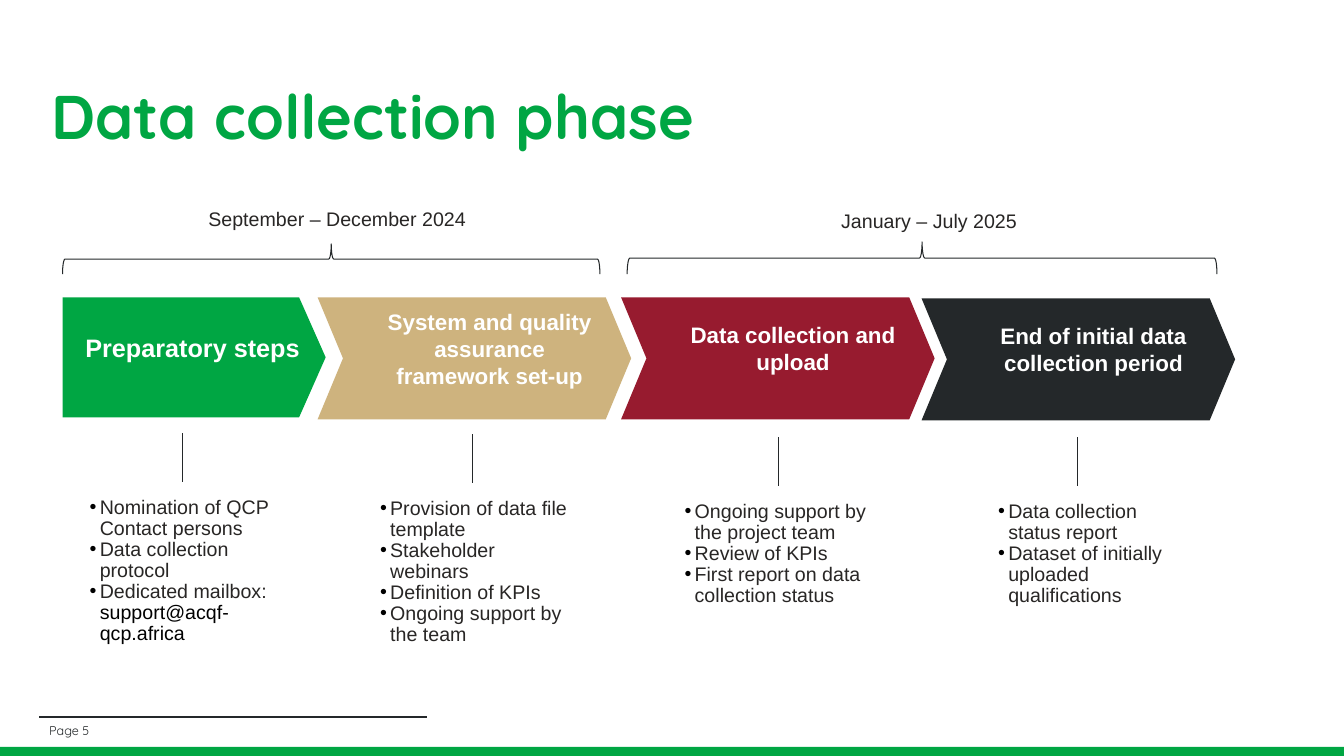
from lxml import etree
from pptx import Presentation
from pptx import util as u
from pptx.dml.color import RGBColor
from pptx.enum import shapes, text
from pptx.oxml.ns import qn

GREEN, DARK, RED, SAND = "00A643", "24282A", "971B2F", "CEB37E"
BODY, BLACK, WHITE = "282625", "000000", "FFFFFF"


def rgb(value):
    return RGBColor.from_string(value)


class PhaseSlide:
    font = "Arial"
    heading_font = "Quicksand"
    label_insets = (0.53, 0.05, 0.53, 0.13)

    def __init__(self, slide):
        self.items = slide.shapes

    def fill_text(self, frame, paragraphs, size, color, insets, font=None, bold=False,
                  align=text.PP_ALIGN.LEFT, anchor=text.MSO_ANCHOR.TOP, spacing=None,
                  bullets=False):
        """Each paragraph is a string, or a pair of body text and black text."""
        frame.word_wrap = True
        frame.vertical_anchor = anchor
        (frame.margin_left, frame.margin_top,
         frame.margin_right, frame.margin_bottom) = map(u.Inches, insets)
        for i, content in enumerate(paragraphs):
            paragraph = frame.add_paragraph() if i else frame.paragraphs[0]
            paragraph.alignment = align
            if spacing:
                paragraph.line_spacing = spacing
            if bullets:
                self.bullet(paragraph)
            paragraph.font.name = font or self.font
            paragraph.font.size = u.Pt(size)
            paragraph.font.bold = bold
            if isinstance(content, str):
                paragraph.font.color.rgb = rgb(color)
                paragraph.add_run().text = content
                continue
            for words, run_color in zip(content, (color, BLACK)):
                run = paragraph.add_run()
                run.text = words
                run.font.color.rgb = rgb(run_color)

    def bullet(self, paragraph):
        props = paragraph._p.get_or_add_pPr()
        props.set("marL", str(u.Inches(0.1)))
        props.set("indent", str(u.Inches(-0.1)))
        bullet_color = etree.SubElement(props, qn("a:buClr"))
        etree.SubElement(bullet_color, qn("a:srgbClr"), val=BLACK)
        etree.SubElement(props, qn("a:buFont"), typeface=self.font)
        etree.SubElement(props, qn("a:buChar"), char="•")

    def text_box(self, box, paragraphs, size, color, insets=(0.1, 0.05, 0.1, 0.05), **style):
        frame = self.items.add_textbox(*map(u.Inches, box)).text_frame
        self.fill_text(frame, paragraphs, size, color, insets, **style)

    def block(self, kind, box, fill=None):
        block = self.items.add_shape(kind, *map(u.Inches, box))
        block.shadow.inherit = False
        if fill:
            block.fill.solid()
            block.fill.fore_color.rgb = rgb(fill)
            block.line.fill.background()
        else:
            block.fill.background()
        return block

    def arrow(self, kind, box, notch, fill, label, size, left_inset):
        arrow = self.block(kind, box, fill)
        arrow.adjustments[0] = notch
        self.fill_text(arrow.text_frame, [label], size, WHITE, (left_inset, 0, 0.1, 0.2),
                       bold=True, align=text.PP_ALIGN.CENTER,
                       anchor=text.MSO_ANCHOR.MIDDLE)

    def brace(self, left, top, width, height):
        # A left brace turned a quarter, centred on the box it spans
        box = (left + (width - height) / 2, top - (width - height) / 2, height, width)
        brace = self.block(shapes.MSO_SHAPE.LEFT_BRACE, box)
        brace.rotation = 90
        brace.adjustments[0] = 0.083
        brace.line.color.rgb = rgb(DARK)
        brace.line.width = u.Pt(0.75)

    def line(self, x1, y1, x2, y2, width=0.75):
        line = self.items.add_connector(shapes.MSO_CONNECTOR.STRAIGHT,
                                        *map(u.Inches, (x1, y1, x2, y2)))
        line.line.color.rgb = rgb(DARK)
        line.line.width = u.Pt(width)
        etree.SubElement(line._element.spPr, qn("a:effectLst"))


def main():
    deck = Presentation()
    deck.slide_width, deck.slide_height = u.Inches(13.33), u.Inches(7.5)
    page = PhaseSlide(deck.slides.add_slide(deck.slide_layouts[6]))
    middle = text.MSO_ANCHOR.MIDDLE

    # Footer and title
    page.block(shapes.MSO_SHAPE.RECTANGLE, (-0.03, 7.41, 13.4, 0.13), GREEN)
    page.line(0.39, 7.11, 4.24, 7.11, 1.5)
    page.text_box((0.41, 0.56, 12.54, 1.26), ["Data collection phase"], 44, GREEN,
                  font=page.heading_font, bold=True, anchor=middle, spacing=0.9)
    page.text_box((0.39, 7.15, 4.06, 0.19), ["Page 5"], 9, DARK,
                  font=page.heading_font, anchor=middle)

    # Phase arrows
    page.arrow(shapes.MSO_SHAPE.PENTAGON, (0.62, 2.95, 2.61, 1.19), 0.221, GREEN,
               "Preparatory steps", 18, 0.2)
    chevrons = [
        (3.15, 2.95, SAND, "System and quality assurance framework set-up"),
        (6.16, 2.95, RED, "Data collection and upload"),
        (9.14, 2.96, DARK, "End of initial data collection period"),
    ]
    for left, top, fill, label in chevrons:
        page.arrow(shapes.MSO_SHAPE.CHEVRON, (left, top, 3.11, 1.21), 0.208, fill,
                   label, 16, 0.4)

    # Tasks under each arrow, with the stem above them
    tasks = [
        (1.81, 4.3, (0.36, 4.89, 2.88, 1.65),
         ["Nomination of QCP Contact persons", "Data collection protocol",
          ("Dedicated mailbox: ", "support@acqf-qcp.africa")]),
        (4.69, 4.31, (3.24, 4.9, 2.93, 1.65),
         ["Provision of data file template", "Stakeholder webinars",
          "Definition of KPIs", "Ongoing support by the team"]),
        (7.72, 4.34, (6.26, 4.93, 2.88, 1.23),
         ["Ongoing support by the project team", "Review of KPIs",
          "First report on data collection status"]),
        (10.69, 4.34, (9.37, 4.93, 2.88, 1.23),
         ["Data collection status report",
          "Dataset of initially uploaded qualifications"]),
    ]
    for stem, stem_top, box, steps in tasks:
        page.line(stem, stem_top + 0.48, stem, stem_top)
        page.text_box(box, steps, 14, BODY, page.label_insets, spacing=0.89, bullets=True)

    # Periods with their braces
    periods = [
        ((0.62, 2.42, 5.33, 0.3), (0.74, 2.03, 5.21, 0.39), "September – December 2024"),
        ((6.22, 2.4, 5.85, 0.32), (6.29, 2.05, 5.85, 0.39), "January – July 2025"),
    ]
    for span, box, period in periods:
        page.brace(*span)
        page.text_box(box, [period], 14, BODY, page.label_insets,
                      align=text.PP_ALIGN.CENTER, spacing=0.89)

    deck.save("out.pptx")


if __name__ == "__main__":
    main()
